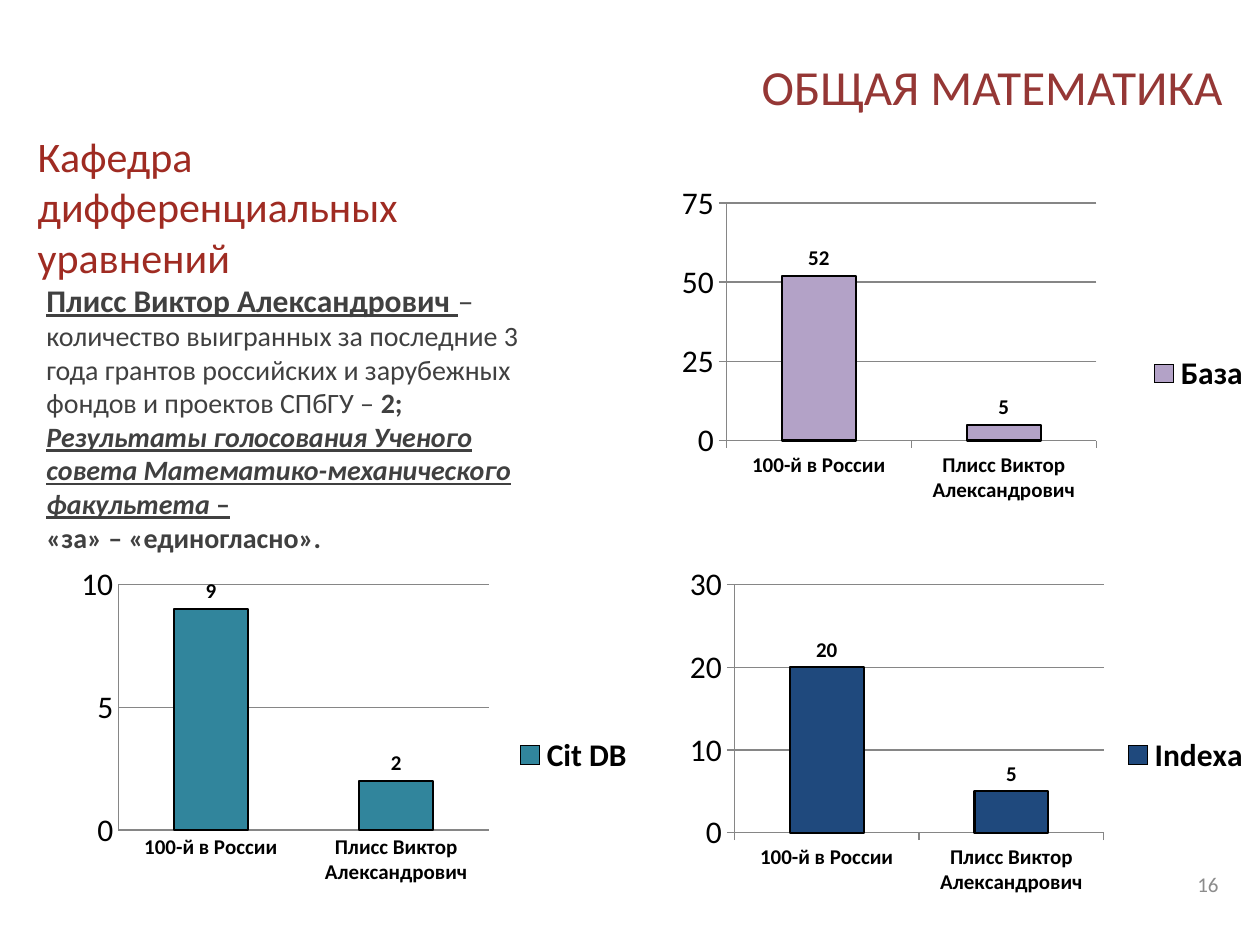
from lxml import etree
from pptx import Presentation
from pptx.chart.data import CategoryChartData
from pptx.dml.color import RGBColor
from pptx.enum.chart import XL_CHART_TYPE, XL_LABEL_POSITION, XL_LEGEND_POSITION, XL_TICK_MARK
from pptx.enum.text import MSO_ANCHOR, PP_ALIGN
from pptx.oxml.ns import qn
from pptx.util import Inches, Pt

COLUMN = XL_CHART_TYPE.COLUMN_CLUSTERED
ABOVE = XL_LABEL_POSITION.OUTSIDE_END
SIDE = XL_LEGEND_POSITION.RIGHT
OUT, NONE = XL_TICK_MARK.OUTSIDE, XL_TICK_MARK.NONE
TOP, MIDDLE = MSO_ANCHOR.TOP, MSO_ANCHOR.MIDDLE
LEFT, RIGHT = PP_ALIGN.LEFT, PP_ALIGN.RIGHT
FONT = "Calibri"
COLORS = {
    "title": "953735", "dept": "9F2B22", "body": "404040", "page": "8C8C8C",
    "black": "000000", "grid": "868686",
    "navy": "1F497D", "teal": "31859C", "lilac": "B3A2C7",
}


def rgb(name):
    return RGBColor.from_string(COLORS[name])


def add_text(slide, box, paras, color, align=LEFT, anchor=MIDDLE):
    frame = slide.shapes.add_textbox(*map(Inches, box)).text_frame
    frame.word_wrap = True
    frame.vertical_anchor = anchor
    for i, runs in enumerate(paras):
        para = frame.add_paragraph() if i else frame.paragraphs[0]
        para.alignment = align
        for text, size, style in runs:
            run = para.add_run()
            run.text = text
            font = run.font
            font.name, font.size = FONT, Pt(size)
            font.color.rgb = rgb(color)
            font.bold, font.italic, font.underline = [s in style for s in "biu"]


prs = Presentation()
prs.slide_width, prs.slide_height = Inches(10), Inches(7.5)
slide = prs.slides.add_slide(prs.slide_layouts[6])

add_text(slide, (2.56, 0.3, 7.24, 0.77), [[("ОБЩАЯ МАТЕМАТИКА", 28, "")]], "title", RIGHT)
add_text(slide, (7.44, 6.82, 2.33, 0.4), [[("16", 12, "")]], "page", RIGHT)

cats = ["100-й в России", "Плисс Виктор Александрович"]
charts = [
    ("Indexa", (20, 5), "navy", 5.11, 4.42, 10, 30, OUT, (0.146, 0.075, 0.596, 0.625)),
    ("Cit DB", (9, 2), "teal", 0.22, 4.42, 5, 10, NONE, (0.146, 0.075, 0.598, 0.618)),
    ("База", (52, 5), "lilac", 5.11, 1.39, 25, 75, OUT, (0.133, 0.075, 0.597, 0.599)),
]
for name, vals, color, left, top, step, peak, tick, area in charts:
    data = CategoryChartData()
    data.categories = cats
    data.add_series(name, vals)
    chart = slide.shapes.add_chart(
        COLUMN, Inches(left), Inches(top), Inches(4.92), Inches(3.15), data).chart
    chart.has_title = False
    chart.font.name, chart.font.size = FONT, Pt(18)
    chart.font.color.rgb = rgb("black")
    chart.has_legend = True
    chart.legend.position = SIDE
    chart.legend.include_in_layout = False
    chart.legend.font.bold = True

    plot = chart.plots[0]
    plot.gap_width = 150
    plot.vary_by_categories = False
    bars = plot.series[0].format
    bars.fill.solid()
    bars.fill.fore_color.rgb = rgb(color)
    bars.line.color.rgb = rgb("black")
    bars.line.width = Pt(1.25)
    plot.has_data_labels = True
    labels = plot.data_labels
    labels.show_value = True
    labels.position = ABOVE
    labels.font.size, labels.font.bold = Pt(12), True

    vert, horiz = chart.value_axis, chart.category_axis
    vert.minimum_scale, vert.maximum_scale, vert.major_unit = 0, peak, step
    vert.has_major_gridlines = True
    vert.major_gridlines.format.line.color.rgb = rgb("grid")
    horiz.tick_labels.font.size, horiz.tick_labels.font.bold = Pt(12), True
    for axis in (vert, horiz):
        axis.major_tick_mark = tick
        axis.minor_tick_mark = NONE
        axis.format.line.color.rgb = rgb("grid")

    zone = plot._element.getparent()
    for old in zone.findall(qn("c:layout")):
        zone.remove(old)
    layout = etree.Element(qn("c:layout"))
    manual = etree.SubElement(layout, qn("c:manualLayout"))
    parts = [("layoutTarget", "inner"), ("xMode", "edge"), ("yMode", "edge")]
    for tag, val in parts + list(zip("xywh", area)):
        etree.SubElement(manual, qn("c:" + tag)).set("val", str(round(val, 2)) if tag == "y" else str(val))
    zone.insert(0, layout)

add_text(slide, (0.2, 0.98, 4.25, 1.31),
         [[("Кафедра дифференциальных уравнений", 24, "")]], "dept")
add_text(slide, (0.27, 2.18, 4.25, 2.59), [
    [("Плисс Виктор Александрович ", 18, "bu"),
     ("– ", 18, ""),
     ("количество выигранных за последние 3 года грантов российских "
      "и зарубежных фондов и проектов СПбГУ – ", 16, ""),
     ("2;", 16, "b")],
    [("Результаты голосования Ученого совета Математико-механического факультета ", 16, "biu"),
     ("–", 16, "bu")],
    [("«за» – «единогласно».", 16, "b")],
], "body", anchor=TOP)

prs.save("out.pptx")
